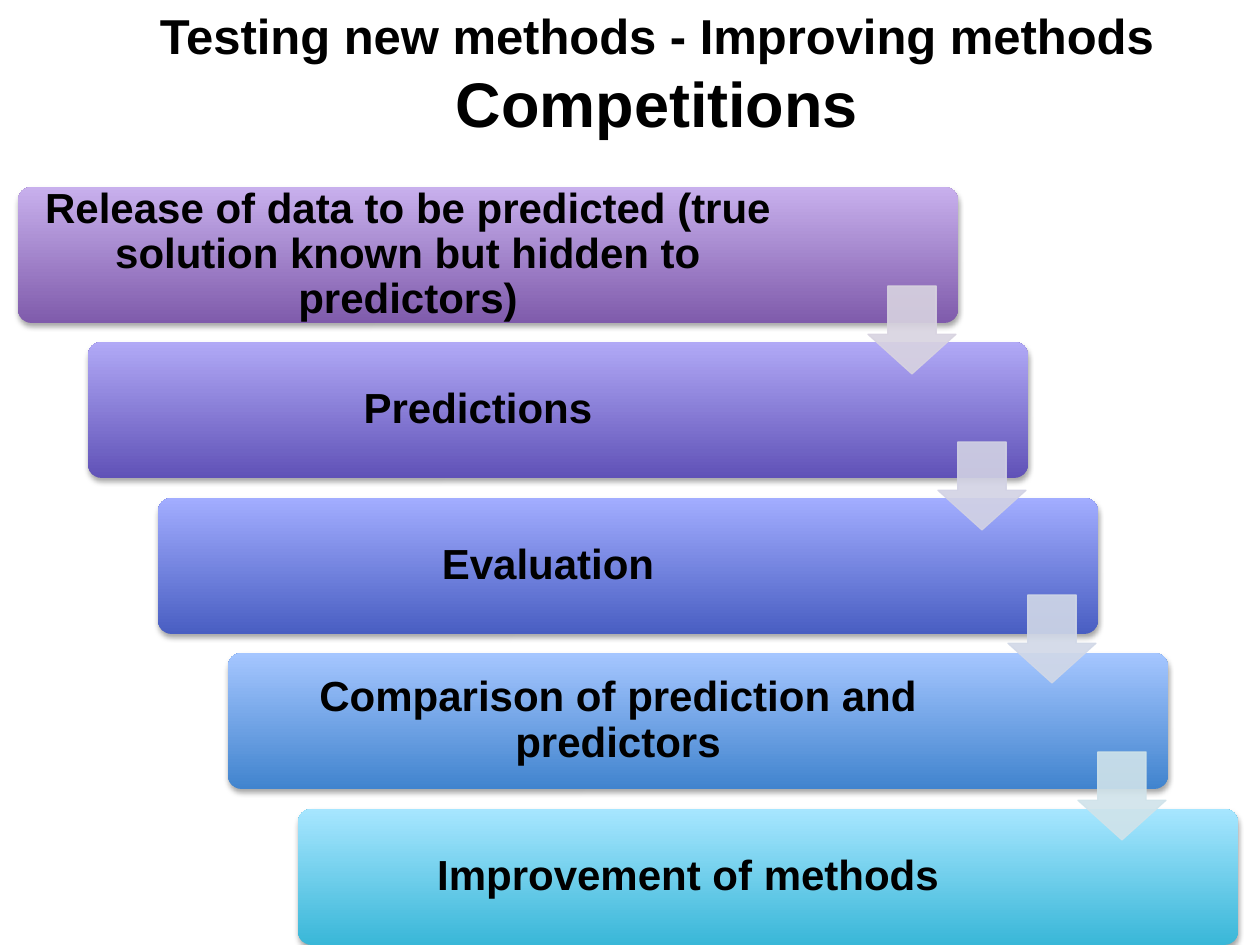
"""Build a slide showing the five stages of a prediction competition as a staircase."""
from dataclasses import dataclass

from lxml import etree
from pptx import Presentation
from pptx import util as u
from pptx.dml import color
from pptx.enum import shapes, text
from pptx.oxml import ns
from pptx.shapes import autoshape, shapetree
from pptx.text import text as txt

PX = 914400 / 126
FONT = "Arial"
BAR_X, BAR_Y, BAR_W, BAR_H = 18, 187, 940, 136
STEP_X, TWO_STEPS_Y = 70, 311
LABEL_INSET, LABEL_W, LABEL_H = 4, 772, 128
ARROW_X, ARROW_SIZE = 868, 88

COLORS = {
    "text": "000000", "shadow": "000000",
    "release_dark": "7F5BAB", "release_light": "C8B0ED", "release_arrow": "D8D3E0",
    "predict_dark": "6052B7", "predict_light": "B1A9F6", "predict_arrow": "D2D2E4",
    "evaluate_dark": "495EC2", "evaluate_light": "A2ADFF", "evaluate_arrow": "D1D8E7",
    "compare_dark": "4184CE", "compare_light": "A5C6FF", "compare_arrow": "D0E3EA",
    "improve_dark": "39B7D8", "improve_light": "A7E6FF",
}


@dataclass(frozen=True)
class Stage:
    name: str
    label: str
    arrow_y: int | None = None


STAGES = [
    Stage("release", "Release of data to be predicted (true solution known but hidden to predictors)", 286),
    Stage("predict", "Predictions", 442),
    Stage("evaluate", "Evaluation", 595),
    Stage("compare", "Comparison of prediction and predictors", 752),
    Stage("improve", "Improvement of methods"),
]


def px(*values: int) -> list[u.Emu]:
    return [u.Emu(round(v * PX)) for v in values]


def rgb(name: str) -> color.RGBColor:
    return color.RGBColor.from_string(COLORS[name])


def format_paragraph(p: txt._Paragraph, size: int) -> None:
    p.alignment = text.PP_ALIGN.CENTER
    p.font.name = FONT
    p.font.size = u.Pt(size)
    p.font.bold = True
    p.font.color.rgb = rgb("text")


def add_shadow(s: autoshape.Shape) -> None:
    s.shadow.inherit = False
    effects = s._element.spPr.find(ns.qn("a:effectLst"))
    outer = etree.SubElement(effects, ns.qn("a:outerShdw"), blurRad="40000",
                             dist="23000", dir="5400000", rotWithShape="0")
    clr = etree.SubElement(outer, ns.qn("a:srgbClr"), val=COLORS["shadow"])
    etree.SubElement(clr, ns.qn("a:alpha"), val="35000")


def add_bar(sps: shapetree.SlideShapes, stage: Stage, x: int, y: int) -> None:
    s = sps.add_shape(shapes.MSO_SHAPE.ROUNDED_RECTANGLE, *px(x, y, BAR_W, BAR_H))
    s.adjustments[0] = 0.1
    s.fill.gradient()
    s.fill.gradient_angle = 90
    for stop, shade in zip(s.fill.gradient_stops, ("dark", "light")):
        stop.color.rgb = rgb(f"{stage.name}_{shade}")
    s.line.fill.background()
    add_shadow(s)


def add_label(sps: shapetree.SlideShapes, stage: Stage, x: int, y: int) -> None:
    tf = sps.add_textbox(*px(x + LABEL_INSET, y + LABEL_INSET, LABEL_W, LABEL_H)).text_frame
    tf.word_wrap = True
    tf.vertical_anchor = text.MSO_ANCHOR.MIDDLE
    tf.margin_left = tf.margin_right = tf.margin_top = tf.margin_bottom = u.Inches(0.1)
    p = tf.paragraphs[0]
    p.text = stage.label
    p.line_spacing = 0.9
    format_paragraph(p, 24)


def add_arrow(sps: shapetree.SlideShapes, stage: Stage, x: int) -> None:
    s = sps.add_shape(shapes.MSO_SHAPE.DOWN_ARROW, *px(x, stage.arrow_y, ARROW_SIZE, ARROW_SIZE))
    s.adjustments[0], s.adjustments[1] = 0.55, 0.45
    s.shadow.inherit = False
    s.fill.solid()
    s.fill.fore_color.rgb = s.line.color.rgb = rgb(f"{stage.name}_arrow")
    s.line.width = u.Pt(0.75)
    for clr in s._element.spPr.iter(ns.qn("a:srgbClr")):
        etree.SubElement(clr, ns.qn("a:alpha"), val="90000")


def fill_title(title: autoshape.Shape) -> None:
    title.left, title.top, title.width, title.height = px(14, -1, 1223, 149)
    tf = title.text_frame
    tf.text = "Testing new methods - Improving methods\nCompetitions"
    tf.word_wrap = True
    tf.auto_size = text.MSO_AUTO_SIZE.SHAPE_TO_FIT_TEXT
    tf.vertical_anchor = text.MSO_ANCHOR.TOP
    for p, size in zip(tf.paragraphs, (28, 36)):
        format_paragraph(p, size)
        p._p.get_or_add_pPr().set("marL", str(u.Inches(0.5)))


def main() -> None:
    prs = Presentation()
    prs.slide_width, prs.slide_height = px(1260, 945)
    sps = prs.slides.add_slide(prs.slide_layouts[5]).shapes
    fill_title(sps.title)
    for i, stage in enumerate(STAGES):
        x, y = BAR_X + i * STEP_X, BAR_Y + i * TWO_STEPS_Y // 2
        add_bar(sps, stage, x, y)
        add_label(sps, stage, x, y)
    for i, stage in enumerate(STAGES[:-1]):
        add_arrow(sps, stage, ARROW_X + i * STEP_X)
    prs.save("out.pptx")


if __name__ == "__main__":
    main()
